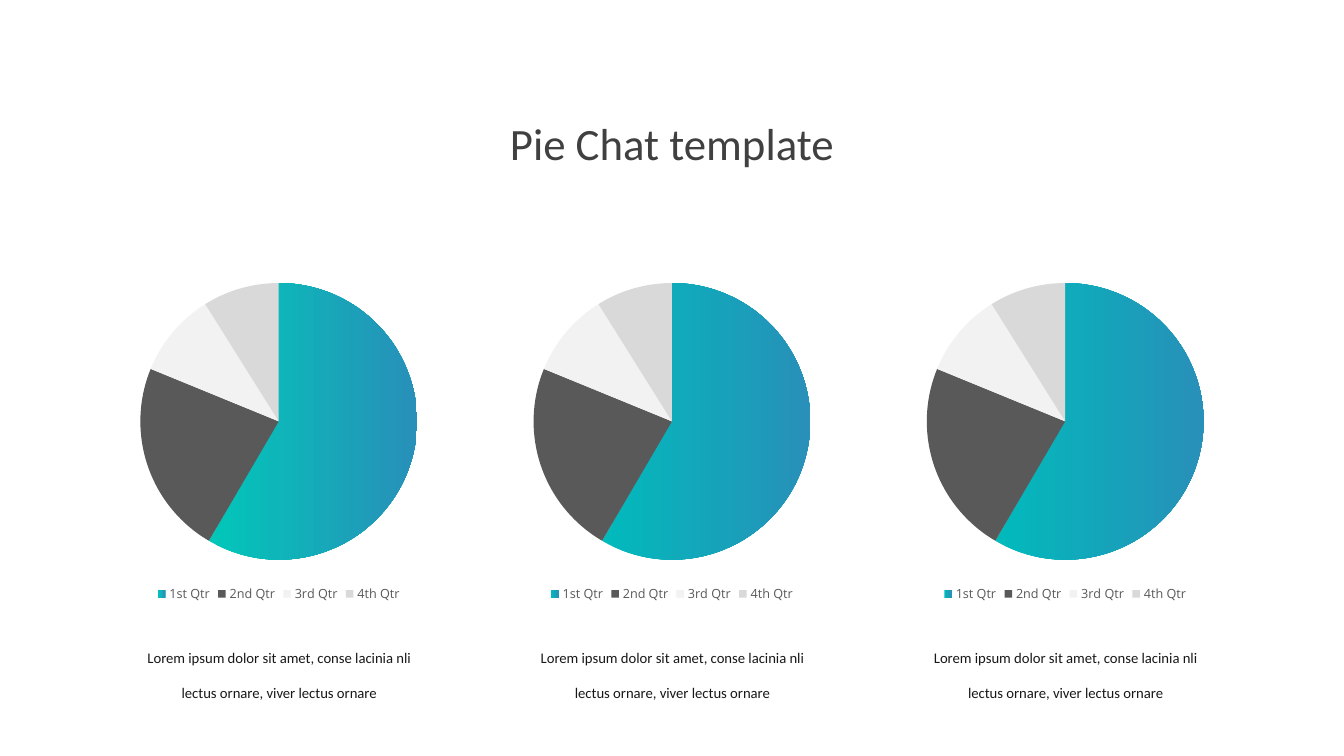
from pptx import Presentation
from pptx import util as u
from pptx.chart import data as cd
from pptx.dml import color as dml
from pptx.enum import chart as ch, text

QUARTERS = ["1st Qtr", "2nd Qtr", "3rd Qtr", "4th Qtr"]
SALES = [59, 23, 10, 9]
GRAYS = ["595959", "F2F2F2", "D9D9D9"]
BLURB = ("Lorem ipsum dolor sit amet, conse lacinia nli "
         "lectus ornare, viver lectus ornare")


def rgb(code):
    return dml.RGBColor.from_string(code)


def style(font, name, size, code):
    font.name = name
    font.size = u.Pt(size)
    font.color.rgb = rgb(code)


def add_label(slide, words, box, size, code, gap=1.0):
    label = slide.shapes.add_textbox(*map(u.Inches, box))
    frame = label.text_frame
    frame.word_wrap = True
    frame.text = words
    line = frame.paragraphs[0]
    line.alignment = text.PP_ALIGN.CENTER
    line.line_spacing = gap
    style(line.runs[0].font, "Calibri", size, code)


def add_pie(slide, box, start):
    data = cd.CategoryChartData()
    data.categories = QUARTERS
    data.add_series("Series 1", SALES)
    frame = slide.shapes.add_chart(
        ch.XL_CHART_TYPE.PIE, *map(u.Inches, box), data)
    chart = frame.chart
    chart.has_title = False
    style(chart.font, "Open Sans", 9, "000000")

    # Legend
    chart.has_legend = True
    chart.legend.position = ch.XL_LEGEND_POSITION.BOTTOM
    chart.legend.include_in_layout = False
    style(chart.legend.font, "Open Sans", 9, "595959")

    # Slices: a gradient for the first, grays for the rest
    plot = chart.plots[0]
    plot.vary_by_categories = True
    points = plot.series[0].points
    for i in range(len(SALES)):
        points[i].format.line.fill.background()
    fill = points[0].format.fill
    fill.gradient()
    fill.gradient_angle = 0
    for stop, place, code in zip(fill.gradient_stops, (0, 1), (start, "2890B9")):
        stop.position = place
        stop.color.rgb = rgb(code)
    for i, code in enumerate(GRAYS, 1):
        fill = points[i].format.fill
        fill.solid()
        fill.fore_color.rgb = rgb(code)


def add_panel(slide, left, top, start):
    # Pie with its caption centred below
    add_pie(slide, (left, top, 4.01, 3.35), start)
    add_label(slide, BLURB, (left + 0.56, top + 3.54, 2.9, 0.76),
              10.5, "181818", 2.0)


def main():
    deck = Presentation()
    deck.slide_width = u.Inches(13.33)
    deck.slide_height = u.Inches(7.5)
    slide = deck.slides.add_slide(deck.slide_layouts[6])

    # Title
    add_label(slide, "Pie Chat template", (3.64, 1.1, 6.05, 0.64), 32, "404040")

    # Three equal panels
    for i, start in enumerate(["01C7B9", "01BABC", "01BABC"]):
        add_panel(slide, 0.76 + 3.9 * i, 2.67, start)

    deck.save("out.pptx")


if __name__ == "__main__":
    main()
